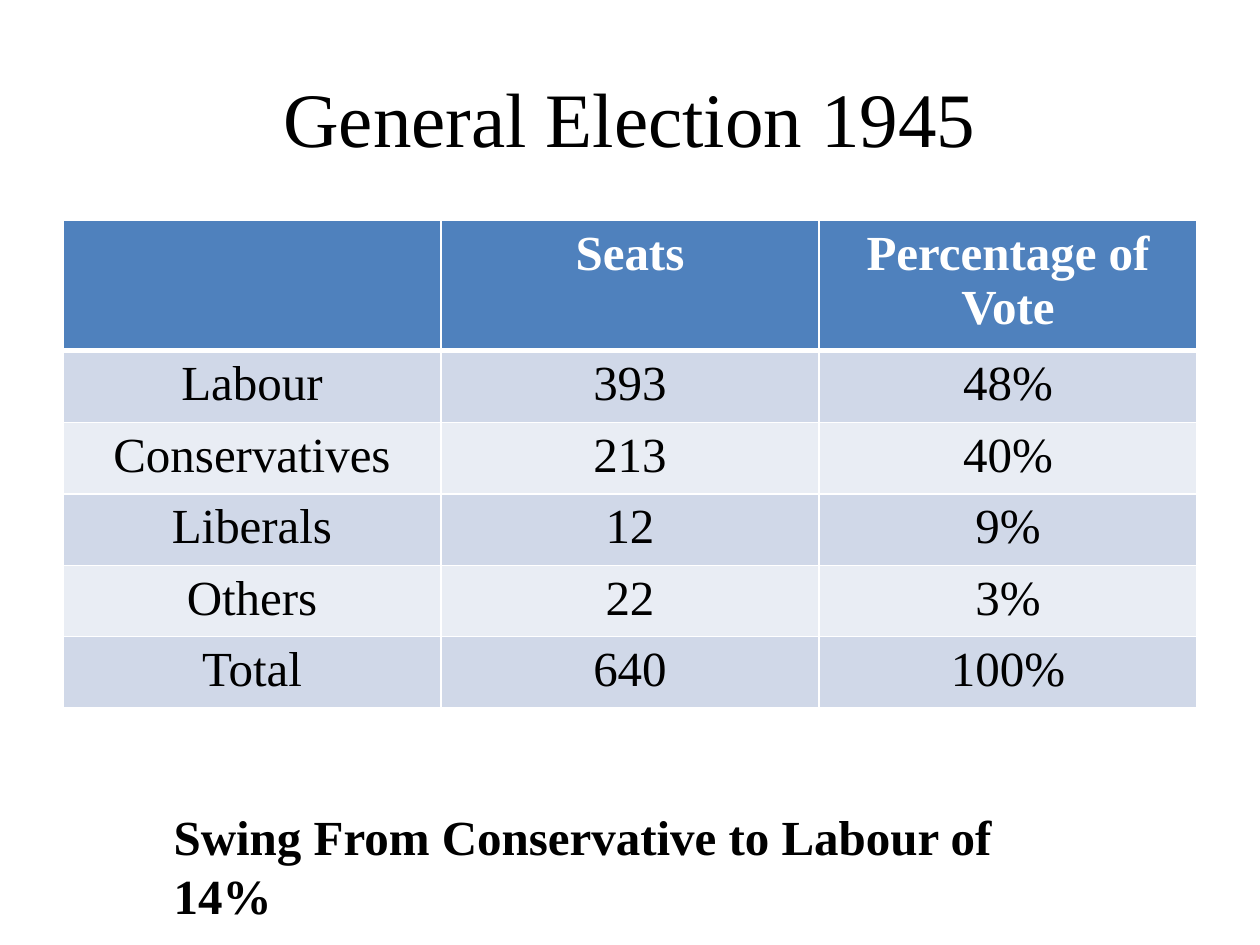
from lxml import etree
from pptx import Presentation
from pptx import util as u
from pptx.dml.color import RGBColor
from pptx.enum import text
from pptx.oxml import ns

FONT = "Times New Roman"
BLACK = RGBColor(0x00, 0x00, 0x00)
WHITE = RGBColor(0xFF, 0xFF, 0xFF)
HEADER = RGBColor(0x4F, 0x81, 0xBD)
BANDS = [RGBColor(0xE9, 0xED, 0xF4), RGBColor(0xD0, 0xD8, 0xE8)]

RESULTS = [
    ("", "Seats", "Percentage of Vote"),
    ("Labour", "393", "48%"),
    ("Conservatives", "213", "40%"),
    ("Liberals", "12", "9%"),
    ("Others", "22", "3%"),
    ("Total", "640", "100%"),
]


def style(para, size, color, bold=False, align=text.PP_ALIGN.CENTER):
    para.alignment = align
    for span in para.runs:
        span.font.name = FONT
        span.font.size = u.Pt(size)
        span.font.bold = bold
        span.font.color.rgb = color


def add_border(cell, side, points):
    line = etree.SubElement(cell._tc.get_or_add_tcPr(), ns.qn("a:" + side),
                            w=str(u.Pt(points)))
    fill = etree.SubElement(line, ns.qn("a:solidFill"))
    etree.SubElement(fill, ns.qn("a:srgbClr"), val=str(WHITE))


deck = Presentation()
deck.slide_width, deck.slide_height = u.Inches(10), u.Inches(7.5)
page = deck.slides.add_slide(deck.slide_layouts[6])

# Shared margins and columns
margin = u.Inches(0.5)
column = u.Inches(3)
row_height = u.Inches(0.41)
content_width = 3 * column

# Title
title = page.shapes.add_textbox(margin, u.Inches(0.3), content_width, u.Inches(1.25))
title.text_frame.word_wrap = True
title.text_frame.vertical_anchor = text.MSO_ANCHOR.MIDDLE
title.text_frame.text = "General Election 1945"
style(title.text_frame.paragraphs[0], 44, BLACK)

# Results table
table = page.shapes.add_table(len(RESULTS), 3, margin, u.Inches(1.75),
                              content_width, len(RESULTS) * row_height).table
for row, record in enumerate(RESULTS):
    table.rows[row].height = row_height
    is_header = row == 0
    for col, value in enumerate(record):
        cell = table.cell(row, col)
        cell.text_frame.text = value
        style(cell.text_frame.paragraphs[0], 28,
              WHITE if is_header else BLACK, bold=is_header)
        for side in ("lnL", "lnR", "lnT", "lnB"):
            heavy = (is_header and side == "lnB") or (row == 1 and side == "lnT")
            add_border(cell, side, 3 if heavy else 1)
        cell.fill.solid()
        cell.fill.fore_color.rgb = HEADER if is_header else BANDS[row % 2]

# Swing note
note = page.shapes.add_textbox(u.Inches(1.28), u.Inches(6.35),
                               u.Inches(7.43), u.Inches(0.57))
note.text_frame.word_wrap = True
note.text_frame.text = "Swing From Conservative to Labour of 14%"
style(note.text_frame.paragraphs[0], 28, BLACK, bold=True,
      align=text.PP_ALIGN.LEFT)

deck.save("out.pptx")
